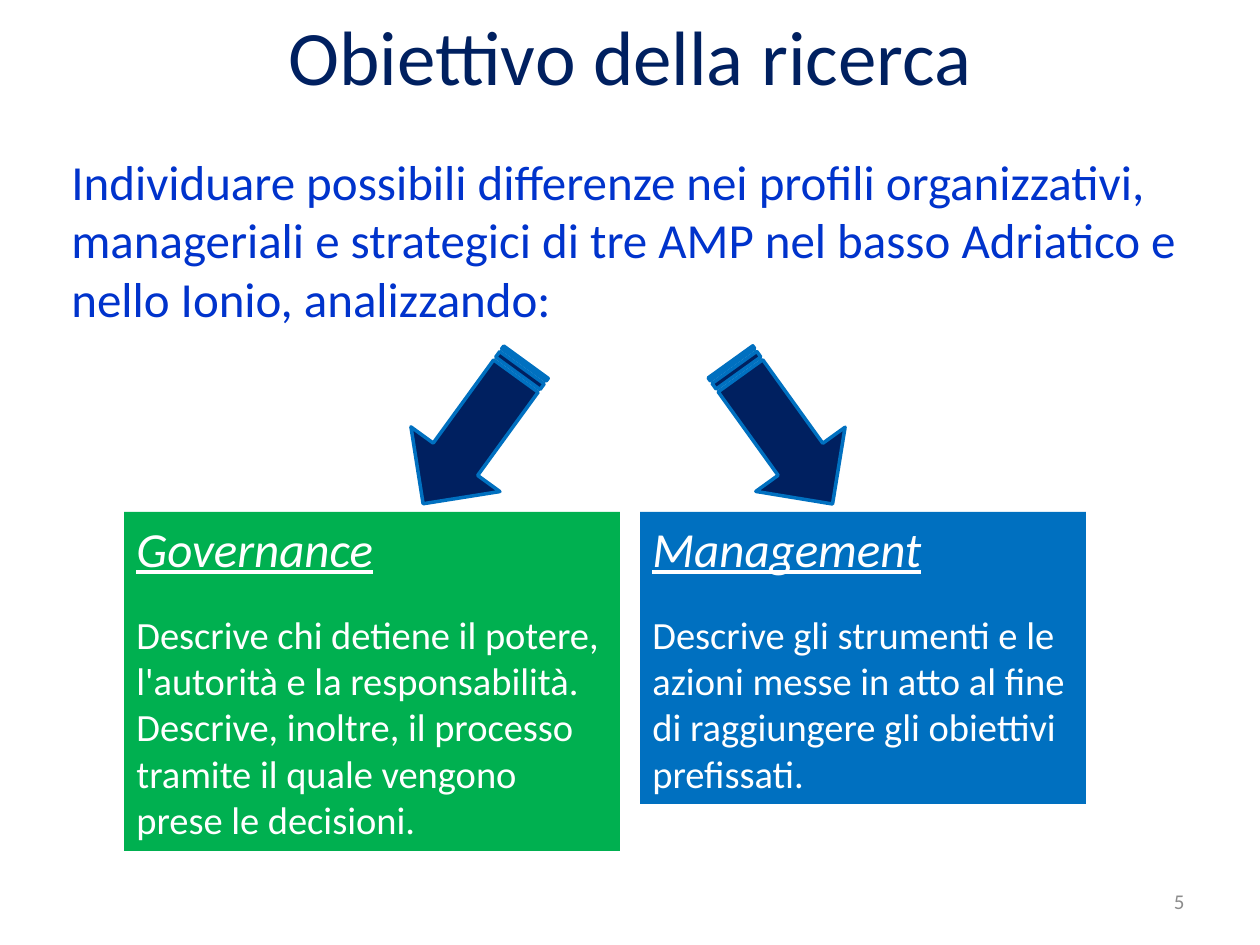
from pptx import Presentation
from pptx.dml.color import RGBColor
from pptx.enum.shapes import MSO_SHAPE as Shape
from pptx.enum.text import MSO_ANCHOR as Anchor, PP_ALIGN as Align
from pptx.util import Pt

PX = 914400 / 126
NAVY = RGBColor(0x00, 0x20, 0x60)
ROYAL = RGBColor(0x00, 0x33, 0xCC)
BLUE = RGBColor(0x00, 0x70, 0xC0)
GREEN = RGBColor(0x00, 0xB0, 0x50)
WHITE = RGBColor(0xFF, 0xFF, 0xFF)
GRAY = RGBColor(0x8C, 0x8C, 0x8C)

# text, place in px, size, colour, alignment, anchor
TEXTS = [
    ("Obiettivo della ricerca", (256, -24, 748, 158), 44, NAVY, Align.CENTER, Anchor.MIDDLE),
    ("Individuare possibili differenze nei profili organizzativi, manageriali e strategici "
     "di tre AMP nel basso Adriatico e nello Ionio, analizzando:",
     (59, 145, 1142, 190), 28, ROYAL, Align.LEFT, Anchor.TOP),
    ("5", (903, 876, 294, 50), 12, GRAY, Align.RIGHT, Anchor.MIDDLE),
]
# left in px, rotation
ARROWS = [(387, 126), (694, 54.3)]
ARROW_TOP, ARROW_WIDTH, ARROW_HEIGHT = 378, 175, 110
# heading, description, left, width, height in px, fill
CARDS = [
    ("Governance",
     "Descrive chi detiene il potere, l'autorità e la responsabilità. Descrive, inoltre, "
     "il processo tramite il quale vengono prese le decisioni.",
     124, 496, 339, GREEN),
    ("Management",
     "Descrive gli strumenti e le azioni messe in atto al fine di raggiungere gli "
     "obiettivi prefissati.",
     640, 446, 292, BLUE),
]
CARD_TOP = 512


def emu(place):
    return [round(length * PX) for length in place]


def style(para, size, color, align=Align.LEFT):
    para.alignment = align
    font = para.runs[0].font
    font.name, font.size, font.color.rgb = "Calibri", Pt(size), color
    return font


def add_filled(slide, kind, place, fill):
    shape = slide.shapes.add_shape(kind, *emu(place))
    shape.shadow.inherit = False
    shape.fill.solid()
    shape.fill.fore_color.rgb = fill
    return shape


def add_text(slide, text, place, size, color, align, anchor):
    frame = slide.shapes.add_textbox(*emu(place)).text_frame
    frame.word_wrap = True
    frame.vertical_anchor = anchor
    frame.text = text
    style(frame.paragraphs[0], size, color, align)


def add_arrow(slide, left, rotation):
    place = (left, ARROW_TOP, ARROW_WIDTH, ARROW_HEIGHT)
    arrow = add_filled(slide, Shape.STRIPED_RIGHT_ARROW, place, NAVY)
    arrow.rotation = rotation
    arrow.line.color.rgb = BLUE
    arrow.line.width = Pt(2)


def add_card(slide, heading, description, left, width, height, fill):
    card = add_filled(slide, Shape.RECTANGLE, (left, CARD_TOP, width, height), fill)
    card.line.fill.background()
    frame = card.text_frame
    frame.word_wrap = True
    frame.vertical_anchor = Anchor.TOP
    frame.text = heading
    font = style(frame.paragraphs[0], 28, WHITE)
    font.italic = font.underline = True
    para = frame.add_paragraph()
    para.text = description
    para.space_before = Pt(19.5)
    style(para, 22, WHITE)


def main():
    deck = Presentation()
    deck.slide_width, deck.slide_height = emu((1260, 945))
    slide = deck.slides.add_slide(deck.slide_layouts[6])
    for text in TEXTS:
        add_text(slide, *text)
    for arrow in ARROWS:
        add_arrow(slide, *arrow)
    for card in CARDS:
        add_card(slide, *card)
    deck.save("out.pptx")


if __name__ == "__main__":
    main()
